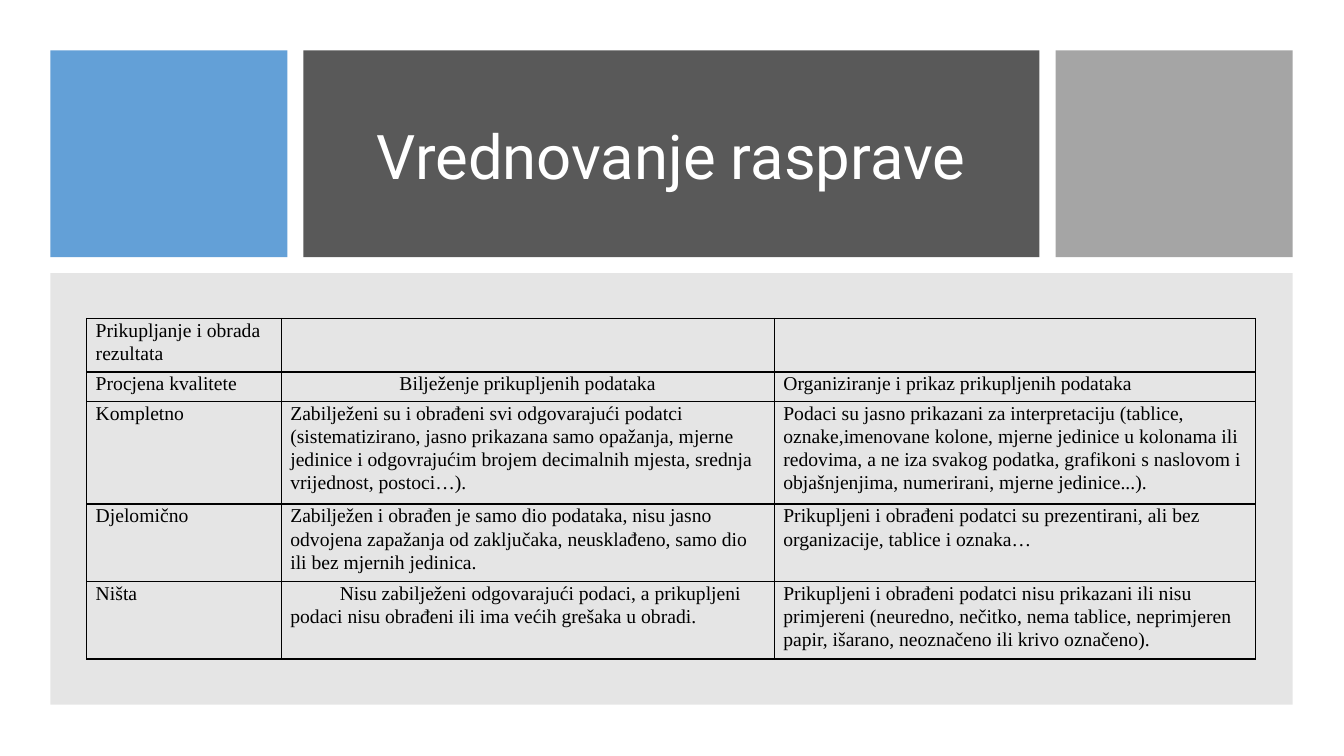
from dataclasses import dataclass

from lxml.etree import SubElement
from pptx import Presentation
from pptx.dml.color import RGBColor
from pptx.enum.shapes import MSO_SHAPE
from pptx.enum.text import MSO_ANCHOR, PP_ALIGN
from pptx.oxml.ns import qn
from pptx.util import Inches, Pt


@dataclass(frozen=True)
class Theme:
    blue: str = "5B9BD5"
    dark: str = "595959"
    gray: str = "A5A5A5"
    panel: str = "808080"
    white: str = "FFFFFF"
    black: str = "000000"
    title_font: str = "Roboto"
    table_font: str = "Times New Roman"
    title_size: int = 44
    table_size: int = 14
    border: int = 1


THEME = Theme()
MARGIN, GAP = 0.5, 0.16
GRID_COLUMNS = (2.35, 7.3, 2.35)
GRID_ROWS = (2.05, 4.28)
TABLE_COLUMNS = (1.93, 4.89, 4.77)
TABLE_ROWS = (0.53, 0.29, 1.02, 0.77, 0.77)
CELL_INSET = 0.09
FIRST_LINE_INDENT = 0.49

CRITERIA = (
    ("Prikupljanje i obrada rezultata", "", ""),
    (
        "Procjena kvalitete",
        "Bilježenje prikupljenih podataka",
        "Organiziranje i prikaz prikupljenih podataka",
    ),
    (
        "Kompletno",
        "Zabilježeni su i obrađeni svi odgovarajući podatci (sistematizirano, "
        "jasno prikazana samo opažanja, mjerne jedinice i odgovrajućim brojem "
        "decimalnih mjesta, srednja vrijednost, postoci…).",
        "Podaci su jasno prikazani za interpretaciju (tablice, oznake,imenovane "
        "kolone, mjerne jedinice u kolonama ili redovima, a ne iza svakog podatka, "
        "grafikoni s naslovom i objašnjenjima, numerirani, mjerne jedinice...).",
    ),
    (
        "Djelomično",
        "Zabilježen i obrađen je samo dio podataka, nisu jasno odvojena zapažanja "
        "od zaključaka, neusklađeno, samo dio ili bez mjernih jedinica.",
        "Prikupljeni i obrađeni podatci su prezentirani, ali bez organizacije, "
        "tablice i oznaka…",
    ),
    (
        "Ništa",
        "Nisu zabilježeni odgovarajući podaci, a prikupljeni podaci nisu obrađeni "
        "ili ima većih grešaka u obradi.",
        "Prikupljeni i obrađeni podatci nisu prikazani ili nisu primjereni "
        "(neuredno, nečitko, nema tablice, neprimjeren papir, išarano, neoznačeno "
        "ili krivo označeno).",
    ),
)
CENTERED_CELL = (1, 1)
INDENTED_CELL = (4, 1)


def span(tracks, first, count=1):
    start = MARGIN + sum(tracks[:first]) + GAP * first
    return start, sum(tracks[first:first + count]) + GAP * (count - 1)


def area(column, row, columns=1):
    left, width = span(GRID_COLUMNS, column, columns)
    top, height = span(GRID_ROWS, row)
    return left, top, width, height


def inset(box, left, top, right, bottom):
    x, y, width, height = box
    return x + left, y + top, width - left - right, height - top - bottom


def add_panel(slide, box, color, opacity=100):
    shape = slide.shapes.add_shape(MSO_SHAPE.RECTANGLE, *map(Inches, box))
    shape.shadow.inherit = False
    shape.line.fill.background()
    shape.fill.solid()
    shape.fill.fore_color.rgb = RGBColor.from_string(color)
    if opacity < 100:
        color_element = shape.fill._xPr.find(qn("a:solidFill"))[0]
        SubElement(color_element, qn("a:alpha"), val=str(opacity * 1000))


def write(paragraph, text, font, size, color, spacing):
    paragraph.line_spacing = spacing
    run = paragraph.add_run()
    run.text = text
    run.font.name = font
    run.font.size = Pt(size)
    run.font.color.rgb = RGBColor.from_string(color)


def add_title(slide, box, text):
    frame = slide.shapes.add_textbox(*map(Inches, box)).text_frame
    frame.word_wrap = True
    frame.vertical_anchor = MSO_ANCHOR.MIDDLE
    paragraph = frame.paragraphs[0]
    paragraph.alignment = PP_ALIGN.CENTER
    write(paragraph, text, THEME.title_font, THEME.title_size, THEME.white, 0.9)


def style_cell(cell):
    cell.margin_left = cell.margin_right = Inches(CELL_INSET)
    cell.margin_top = cell.margin_bottom = 0
    properties = cell._tc.get_or_add_tcPr()
    for side in ("a:lnL", "a:lnR", "a:lnT", "a:lnB"):
        line = SubElement(properties, qn(side), w=str(Pt(THEME.border)))
        fill = SubElement(line, qn("a:solidFill"))
        SubElement(fill, qn("a:srgbClr"), val=THEME.black)
    cell.fill.background()


def add_criteria_table(slide, left, top):
    table = slide.shapes.add_table(
        len(TABLE_ROWS), len(TABLE_COLUMNS), Inches(left), Inches(top),
        Inches(sum(TABLE_COLUMNS)), Inches(sum(TABLE_ROWS)),
    ).table
    table.first_row = table.horz_banding = False
    for column, width in zip(table.columns, TABLE_COLUMNS):
        column.width = Inches(width)
    for row, height in zip(table.rows, TABLE_ROWS):
        row.height = Inches(height)
    for row_index, texts in enumerate(CRITERIA):
        for column_index, text in enumerate(texts):
            cell = table.cell(row_index, column_index)
            style_cell(cell)
            if not text:
                continue
            paragraph = cell.text_frame.paragraphs[0]
            write(paragraph, text, THEME.table_font, THEME.table_size, THEME.black, 1.07)
            if (row_index, column_index) == CENTERED_CELL:
                paragraph.alignment = PP_ALIGN.CENTER
            if (row_index, column_index) == INDENTED_CELL:
                paragraph._p.get_or_add_pPr().set("indent", str(Inches(FIRST_LINE_INDENT)))


def main():
    presentation = Presentation()
    presentation.slide_width = Inches(13.33)
    presentation.slide_height = Inches(7.5)
    slide = presentation.slides.add_slide(presentation.slide_layouts[6])
    title_area = area(1, 0)
    table_area = area(0, 1, columns=3)
    add_panel(slide, area(0, 0), THEME.blue, opacity=95)
    add_panel(slide, title_area, THEME.dark)
    add_title(slide, inset(title_area, 0.32, 0.3, 0.32, 0.19), "Vrednovanje rasprave")
    add_panel(slide, area(2, 0), THEME.gray)
    add_panel(slide, table_area, THEME.panel, opacity=20)
    add_criteria_table(slide, table_area[0] + 0.36, table_area[1] + 0.45)
    presentation.save("out.pptx")


if __name__ == "__main__":
    main()
